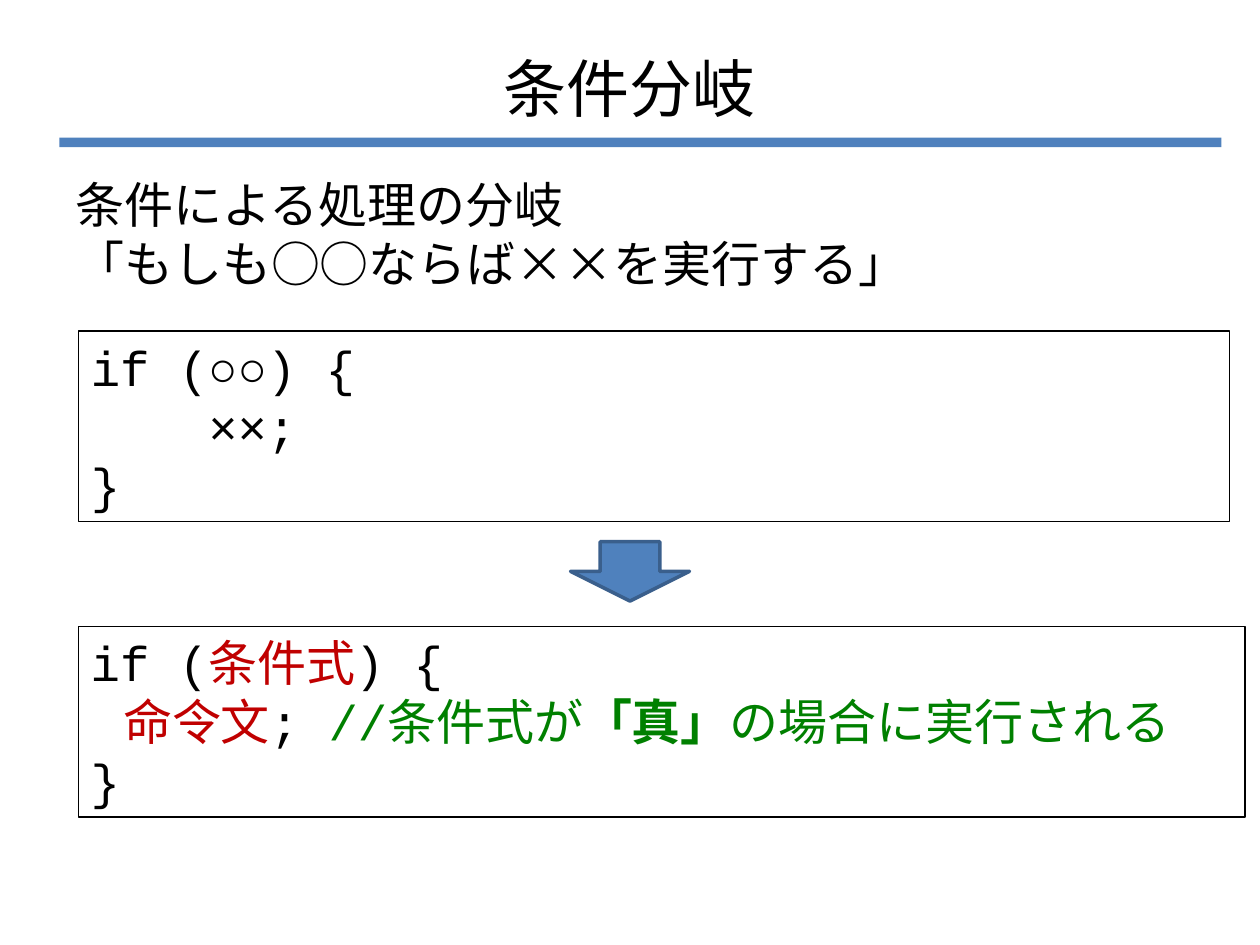
from pptx import Presentation, util as u
from pptx.dml.color import RGBColor
from pptx.enum import shapes, text
from pptx.oxml.ns import qn
from lxml import etree

Pt = u.Pt
SANS, CODE = "Noto Sans CJK JP", "Courier New"
BLACK, RED, GREEN, BLUE = "000000", "C00000", "008000", "4F81BD"


def rgb(value):
    return RGBColor.from_string(value)


def style_run(r, size, font, color=BLACK, bold=False):
    r.font.size = Pt(size)
    r.font.name = font
    r.font.color.rgb = rgb(color)
    r.font.bold = bold
    ea = etree.SubElement(r._r.get_or_add_rPr(), qn("a:ea"))
    ea.set("typeface", SANS)


def add_block(s, kind, box, fill=None, line=None, width=0.75):
    sp = s.shapes.add_shape(kind, *map(Pt, box))
    sp.shadow.inherit = False
    if fill:
        sp.fill.solid()
        sp.fill.fore_color.rgb = rgb(fill)
    else:
        sp.fill.background()
    if line:
        sp.line.color.rgb = rgb(line)
        sp.line.width = Pt(width)
    else:
        sp.line.fill.background()
    return sp


def add_text(s, box, content, size, font, before=0):
    tf = s.shapes.add_textbox(*map(Pt, box)).text_frame
    tf.word_wrap = True
    p = tf.paragraphs[0]
    p.text = content
    p.space_before = Pt(before)
    for r in p.runs:
        style_run(r, size, font)
    return tf


def add_header(s, box):
    left, top, width, height = box
    tf = add_text(s, box, "条件分岐", 36, "Arial")
    tf.vertical_anchor = text.MSO_ANCHOR.MIDDLE
    tf.paragraphs[0].alignment = text.PP_ALIGN.CENTER
    add_block(s, shapes.MSO_SHAPE.RECTANGLE,
              (left - 2, top + height, width + 16, 5.5), fill=BLUE)


def add_code(s, box, lines):
    """Each line is an indent in points and its (text, color, bold) runs."""
    sp = add_block(s, shapes.MSO_SHAPE.RECTANGLE, box, line=BLACK)
    tf = sp.text_frame
    tf.word_wrap = True
    tf.vertical_anchor = text.MSO_ANCHOR.TOP
    for i, (indent, runs) in enumerate(lines):
        p = tf.add_paragraph() if i else tf.paragraphs[0]
        p.alignment = text.PP_ALIGN.LEFT
        p._p.get_or_add_pPr().set("marL", str(Pt(indent)))
        for content, color, bold in runs:
            r = p.add_run()
            r.text = content
            style_run(r, 28, CODE, color, bold)


def main():
    prs = Presentation()
    prs.slide_width, prs.slide_height = Pt(720), Pt(540)
    s = prs.slides.add_slide(prs.slide_layouts[6])

    add_header(s, (36, 21.6, 648, 57))
    add_text(s, (36, 96, 648, 394),
             "条件による処理の分岐\v「もしも○○ならば××を実行する」", 28, SANS, 5.6)

    closing = (0, [("}", BLACK, False)])
    add_code(s, (44.8, 189.2, 658, 108.9), [
        (0, [("if (○○) {", BLACK, False)]),
        (67.2, [("××;", BLACK, False)]),
        closing,
    ])
    add_code(s, (44.8, 358, 666.7, 108.9), [
        (0, [("if (", BLACK, False), ("条件式", RED, False),
             (") {", BLACK, False)]),
        (18.5, [("命令文", RED, False), ("; ", BLACK, False),
                ("//条件式が", GREEN, False), ("「真」", GREEN, True),
                ("の場合に実行される", GREEN, False)]),
        closing,
    ])
    add_block(s, shapes.MSO_SHAPE.DOWN_ARROW, (326, 309.5, 68, 34),
              fill=BLUE, line="3A5F8C", width=2)
    prs.save("out.pptx")


if __name__ == "__main__":
    main()
